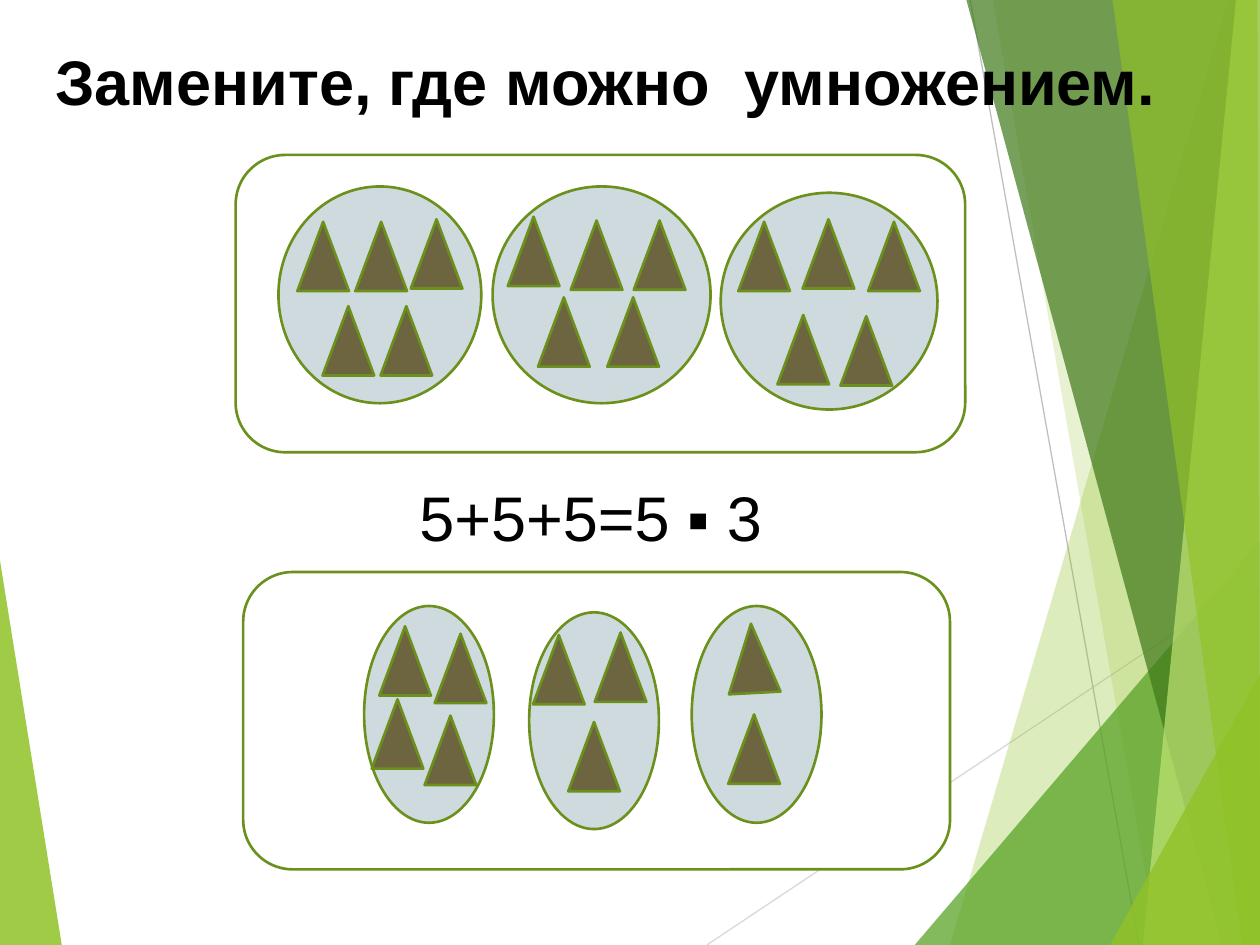
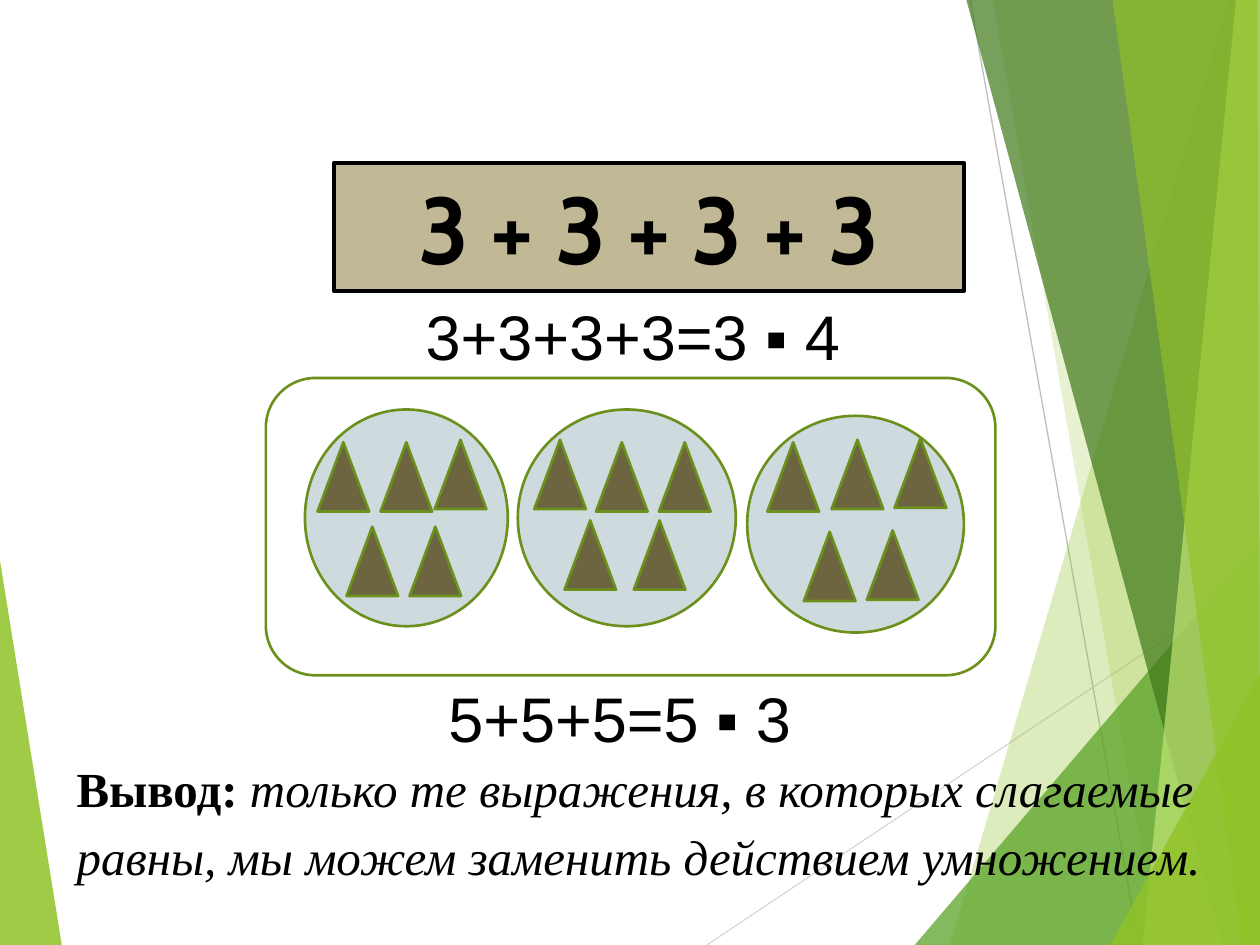
from dataclasses import dataclass

from lxml import etree
from pptx import Presentation
from pptx import util as u
from pptx.dml.color import RGBColor
from pptx.enum import shapes as kinds, text as modes
from pptx.oxml.ns import qn

PX = 9144  # one px is a hundredth of an inch


@dataclass(frozen=True)
class Theme:
    lime: str = "90C226"
    green: str = "54A021"
    forest: str = "3F7819"
    pale: str = "C0E474"
    edge: str = "6B901C"
    oval: str = "CFDADF"
    brown: str = "6D6540"
    tan: str = "C1B995"
    white: str = "FFFFFF"
    black: str = "000000"
    sans: str = "Arial"
    round: str = "Cabin"
    serif: str = "Times New Roman"
    head: int = 36
    huge: int = 54
    note: int = 28
    thin: float = 0.75
    line: float = 1.5
    thick: float = 2.25


@dataclass(frozen=True)
class Box:
    x: int
    y: int
    w: int
    h: int

    def emu(self) -> tuple:
        return tuple(u.Emu(n * PX) for n in (self.x, self.y, self.w, self.h))


@dataclass(frozen=True)
class Facet:
    color: str
    alpha: int
    points: tuple


@dataclass(frozen=True)
class Ray:
    color: str
    start: tuple
    end: tuple


@dataclass(frozen=True)
class Group:
    oval: Box
    cones: tuple  # x, y and an optional turn in degrees


@dataclass(frozen=True)
class Run:
    text: str
    size: int
    font: str
    bold: bool = False
    italic: bool = False


T = Theme()
CONE = (41, 55)
KIND = kinds.MSO_SHAPE

# Backdrop, from back to front
DECOR = (
    Facet(T.lime, 85, ((0, 445), (49, 750), (0, 750))),
    Ray("D9D9D9", (561, 750), (1000, 457)),
    Ray("BFBFBF", (770, 0), (904, 750)),
    Facet(T.lime, 30, ((975, 0), (754, 750), (1000, 750), (1000, 0))),
    Facet(T.lime, 20, ((788, 0), (919, 750), (1000, 750), (1000, 0))),
    Facet(T.green, 72, ((726, 750), (1000, 429), (1000, 750))),
    Facet(T.forest, 70, ((767, 0), (970, 750), (1000, 750), (1000, 0))),
    Facet(T.pale, 70, ((981, 0), (907, 750), (1000, 750), (1000, 0))),
    Facet(T.lime, 65, ((883, 0), (986, 750), (1000, 750), (998, 0))),
    Facet(T.lime, 80, ((881, 750), (1000, 535), (1000, 750))),
)

# Groups of triangles
FIVES = (
    Group(Box(221, 148, 161, 172),
          ((236, 176), (282, 176), (326, 174), (256, 243), (302, 243))),
    Group(Box(391, 148, 173, 172),
          ((403, 172), (453, 175), (503, 175), (427, 236), (482, 236))),
    Group(Box(572, 153, 172, 172),
          ((586, 176), (637, 174), (689, 176), (617, 250), (667, 251))),
)
MIXED = (
    Group(Box(289, 481, 103, 172),
          ((301, 497), (345, 503), (295, 555), (337, 568))),
    Group(Box(420, 486, 103, 172), ((423, 504), (472, 502), (451, 573))),
    Group(Box(549, 481, 103, 172), ((577, 495, 356.9), (578, 567))),
)
AGAIN = (
    Group(Box(242, 325, 161, 172),
          ((252, 351), (302, 351), (345, 349), (275, 418), (325, 418))),
    Group(Box(411, 325, 173, 172),
          ((424, 349), (473, 351), (523, 351), (448, 413), (503, 413))),
    Group(Box(593, 330, 172, 172),
          ((609, 351), (660, 349), (710, 348), (638, 422), (688, 421))),
)


def rgb(color: str) -> RGBColor:
    return RGBColor.from_string(color)


def paint(shape, fill: str, edge: str = T.edge, width: float = T.line) -> None:
    shape.shadow.inherit = False
    shape.fill.solid()
    shape.fill.fore_color.rgb = rgb(fill)
    shape.line.color.rgb = rgb(edge)
    shape.line.width = u.Pt(width)


def add(slide, kind, box: Box, fill: str):
    shape = slide.shapes.add_shape(kind, *box.emu())
    paint(shape, fill)
    return shape


def write(para, *runs: Run) -> None:
    for item in runs:
        run = para.add_run()
        run.text = item.text
        font = run.font
        font.size, font.name = u.Pt(item.size), item.font
        font.bold, font.italic = item.bold, item.italic
        font.color.rgb = rgb(T.black)


def facet(slide, part: Facet) -> None:
    pen = slide.shapes.build_freeform(*part.points[0], scale=PX)
    pen.add_line_segments(part.points[1:], close=True)
    shape = pen.convert_to_shape()
    paint(shape, part.color)
    shape.line.fill.background()
    tint = shape.element.spPr.find(qn("a:solidFill"))[0]
    etree.SubElement(tint, qn("a:alpha"), val=str(part.alpha * 1000))


def ray(slide, part: Ray) -> None:
    ends = [u.Emu(n * PX) for n in part.start + part.end]
    line = slide.shapes.add_connector(kinds.MSO_CONNECTOR.STRAIGHT, *ends)
    line.line.color.rgb = rgb(part.color)
    line.line.width = u.Pt(T.thin)
    etree.SubElement(line.element.spPr, qn("a:effectLst"))


def decor(slide) -> None:
    for part in DECOR:
        if isinstance(part, Ray):
            ray(slide, part)
        else:
            facet(slide, part)


def card(slide, box: Box, groups: tuple) -> None:
    add(slide, KIND.ROUNDED_RECTANGLE, box, T.white)
    for group in groups:
        add(slide, KIND.OVAL, group.oval, T.oval)
        for x, y, *turn in group.cones:
            cone = add(slide, KIND.ISOSCELES_TRIANGLE, Box(x, y, *CONE), T.brown)
            cone.rotation = turn[0] if turn else 0


def label(slide, box: Box, *runs: Run, wrap: bool = False, space: float = 1.0) -> None:
    frame = slide.shapes.add_textbox(*box.emu()).text_frame
    frame.word_wrap = wrap
    para = frame.paragraphs[0]
    para.line_spacing = space
    write(para, *runs)


def sums(slide, box: Box, words: str) -> None:
    label(slide, box, Run(words, T.head, T.sans))


def title(slide, box: Box, words: str) -> None:
    shape = slide.shapes.title
    shape.left, shape.top, shape.width, shape.height = box.emu()
    slide.shapes.element.append(shape.element)  # above the backdrop
    frame = shape.text_frame
    frame.word_wrap = True
    frame.auto_size = modes.MSO_AUTO_SIZE.NONE
    frame.vertical_anchor = modes.MSO_ANCHOR.TOP
    para = frame.paragraphs[0]
    para.alignment = modes.PP_ALIGN.LEFT
    write(para, Run(words, T.head, T.sans, bold=True))


def banner(slide, box: Box, words: str) -> None:
    shape = slide.shapes.add_shape(KIND.RECTANGLE, *box.emu())
    paint(shape, T.tan, T.black, T.thick)
    frame = shape.text_frame
    frame.vertical_anchor = modes.MSO_ANCHOR.MIDDLE
    para = frame.paragraphs[0]
    para.alignment = modes.PP_ALIGN.CENTER
    write(para, Run(words, T.huge, T.round, bold=True))


def task(deck) -> None:
    slide = deck.slides.add_slide(deck.slide_layouts[5])
    decor(slide)
    title(slide, Box(34, 29, 966, 71), "Замените, где можно  умножением.")
    card(slide, Box(187, 123, 579, 236), FIVES)
    card(slide, Box(193, 454, 561, 236), MIXED)
    sums(slide, Box(323, 375, 295, 71), "5+5+5=5 ▪ 3")


def result(deck) -> None:
    slide = deck.slides.add_slide(deck.slide_layouts[6])
    decor(slide)
    banner(slide, Box(265, 129, 500, 102), "3 + 3 + 3 + 3")
    sums(slide, Box(328, 231, 352, 71), "3+3+3+3=3 ▪ 4")
    card(slide, Box(211, 300, 579, 236), AGAIN)
    sums(slide, Box(346, 534, 295, 71), "5+5+5=5 ▪ 3")
    label(slide, Box(51, 590, 929, 115),
          Run("Вывод: ", T.note, T.serif, bold=True),
          Run("только те выражения, в которых слагаемые равны, "
              "мы можем заменить действием умножением.",
              T.note, T.serif, italic=True),
          wrap=True, space=1.15)


def main() -> None:
    deck = Presentation()
    deck.slide_width, deck.slide_height = u.Emu(1000 * PX), u.Emu(750 * PX)
    task(deck)
    result(deck)
    deck.save("out.pptx")


if __name__ == "__main__":
    main()
